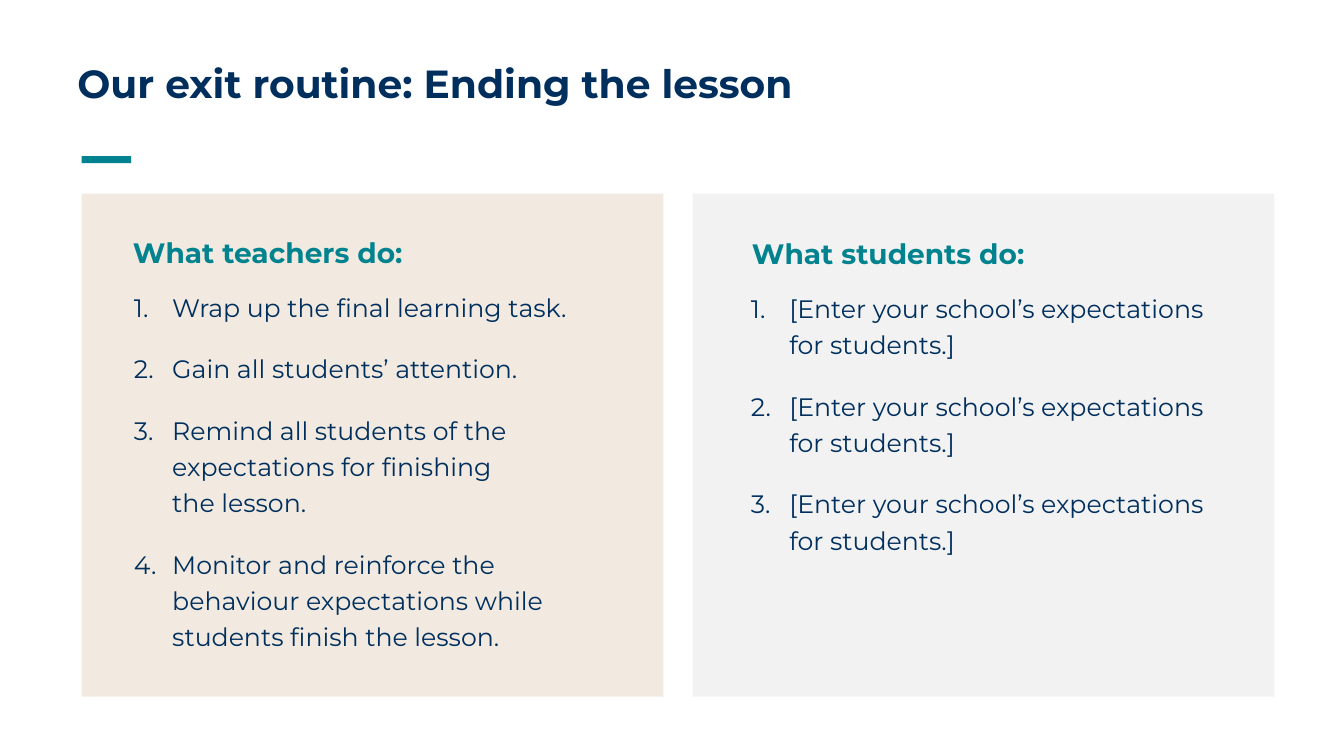
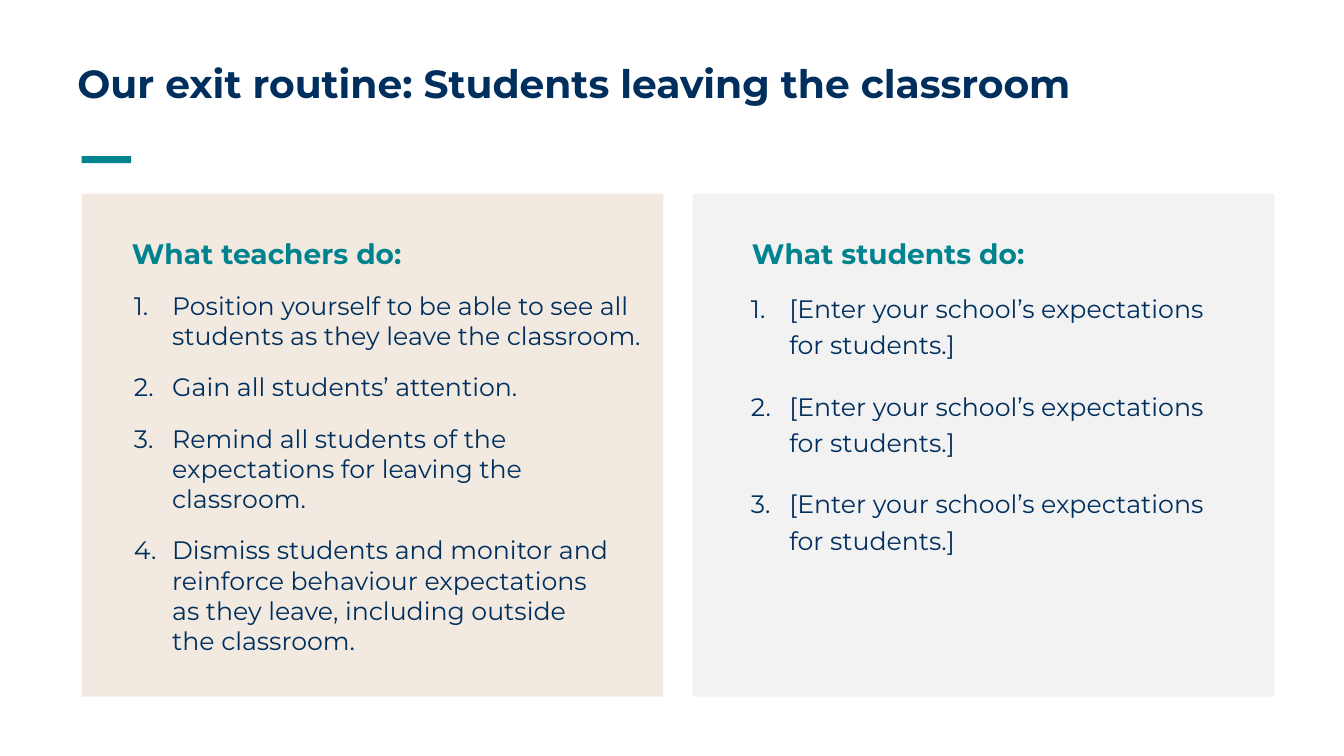
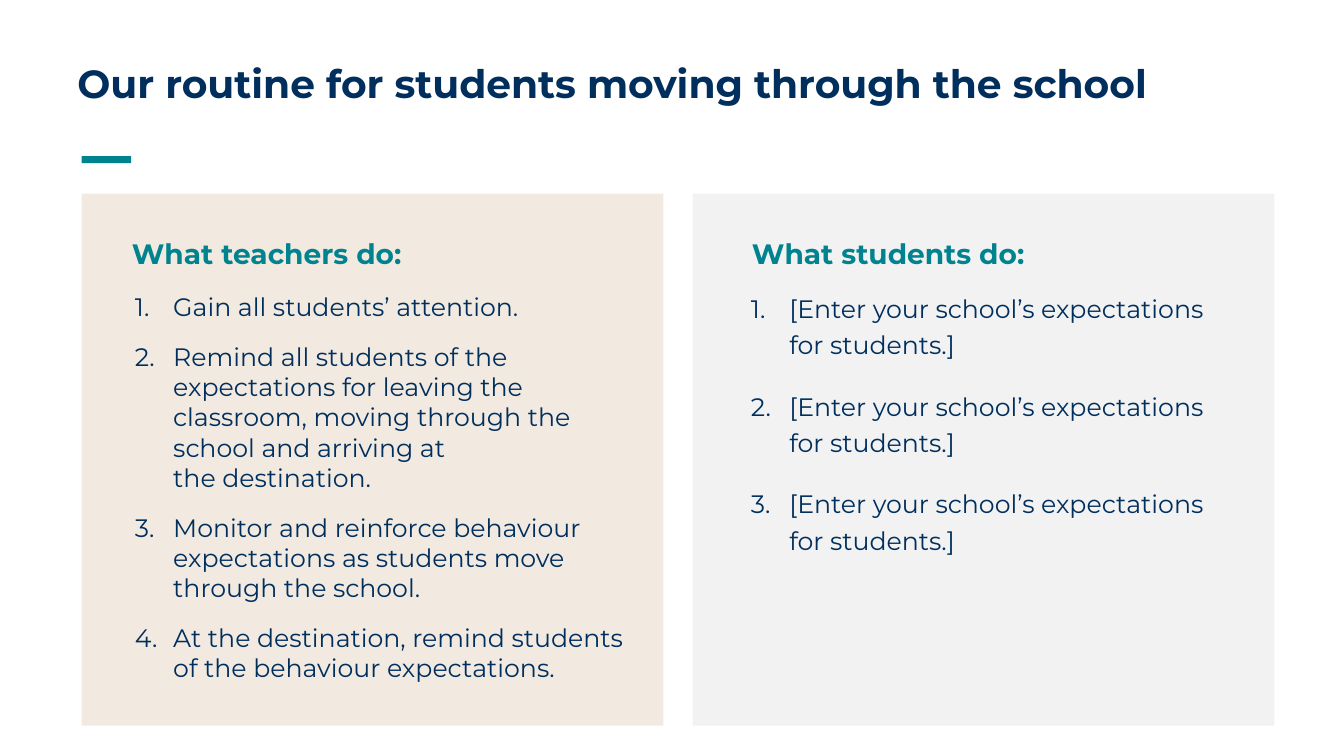
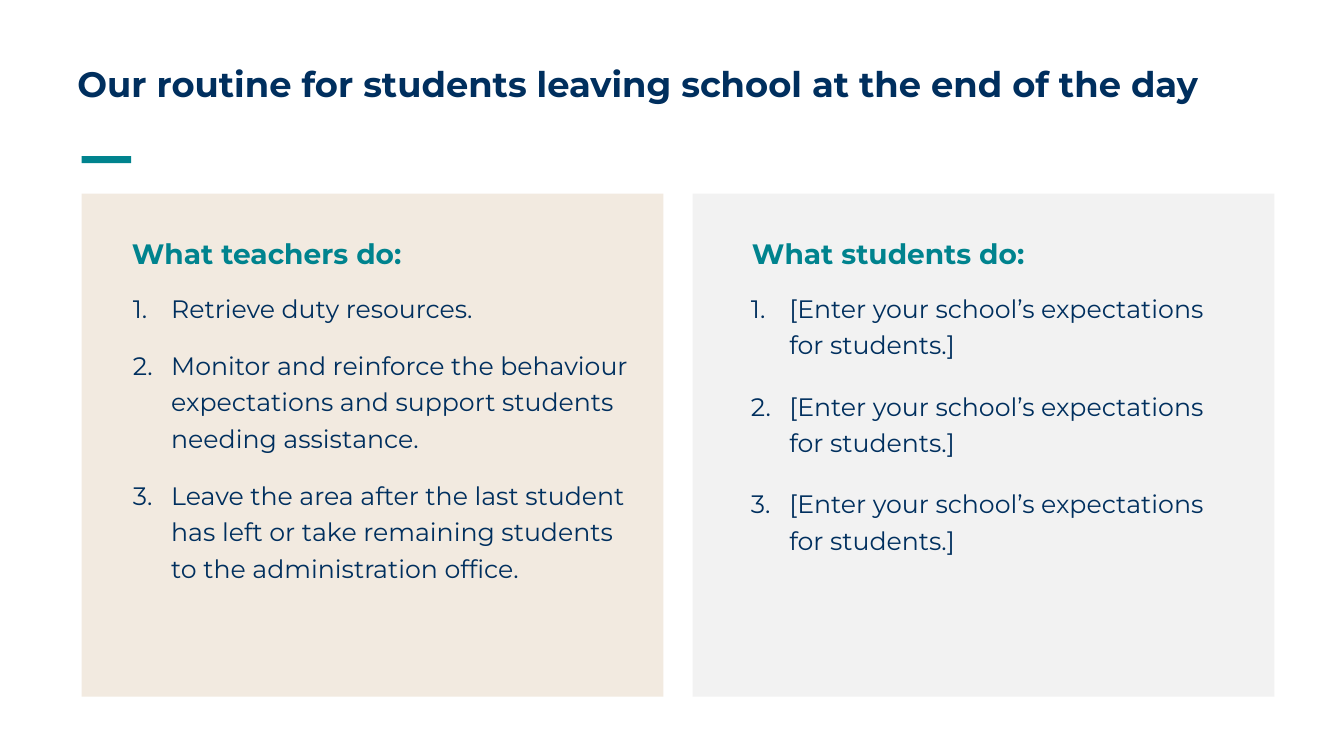
from dataclasses import dataclass

from lxml.etree import SubElement
from pptx import Presentation
from pptx.dml.color import RGBColor
from pptx.enum.shapes import MSO_SHAPE
from pptx.enum.text import MSO_ANCHOR, MSO_AUTO_SIZE
from pptx.oxml.ns import qn
from pptx.util import Inches, Pt


@dataclass(frozen=True)
class Theme:
    navy: str = "002F5E"
    teal: str = "00838E"
    sand: str = "F2EAE0"
    gray: str = "F2F2F2"
    font: str = "Montserrat"
    title: float = 28
    head: float = 20
    body: float = 18


THEME = Theme()
LEFT, TOP, WIDE, GAP = 0.81, 1.92, 5.77, 0.29
RIGHT = LEFT + WIDE + GAP
INDENT = 0.38

TASKS = ["[Enter your school’s expectations for students.]"] * 3

SLIDES = [
    dict(
        title="Our exit routine: Ending the lesson",
        steps=[
            "Wrap up the final learning task.",
            "Gain all students’ attention.",
            "Remind all students of the expectations for finishing \nthe lesson.",
            "Monitor and reinforce the behaviour expectations while "
            "students finish the lesson.",
        ],
        head=(1.22, 2.29, 5.42, 0.44),
        area=(1.23, 2.79, 4.92, 4.35),
    ),
    dict(
        title="Our exit routine: Students leaving the classroom",
        steps=[
            "Position yourself to be able to see all students as they "
            "leave the classroom.",
            "Gain all students’ attention.",
            "Remind all students of the expectations for leaving the classroom.",
            "Dismiss students and monitor and reinforce behaviour expectations "
            "\nas they leave, including outside \nthe classroom.",
        ],
        area=(1.23, 2.83, 5.27, 3.76),
        line=1.0,
        after=15,
    ),
    dict(
        title="Our routine for students moving through the school",
        steps=[
            "Gain all students’ attention.",
            "Remind all students of the expectations for leaving the classroom, "
            "moving through the school and arriving at \nthe destination.",
            "Monitor and reinforce behaviour expectations as students move "
            "\nthrough the school.",
            "At the destination, remind students \nof the behaviour expectations.",
        ],
        area=(1.24, 2.84, 5.2, 4.02),
        line=1.0,
        after=14,
        tall=5.28,
    ),
    dict(
        title="Our routine for students leaving school at the end of the day",
        steps=[
            "Retrieve duty resources.",
            "Monitor and reinforce the behaviour expectations and support "
            "students needing assistance.",
            "Leave the area after the last student has left or take remaining "
            "students to the administration office.",
        ],
        area=(1.22, 2.8, 5.27, 3.12),
        after=15,
        size=25.2,
    ),
]


def add_rect(slide, box, fill):
    rect = slide.shapes.add_shape(MSO_SHAPE.RECTANGLE, *map(Inches, box))
    rect.shadow.inherit = False
    rect.fill.solid()
    rect.fill.fore_color.rgb = RGBColor.from_string(fill)
    rect.line.fill.background()


def number(para):
    props = para._p.get_or_add_pPr()
    props.set("marL", str(Inches(INDENT)))
    props.set("indent", str(-Inches(INDENT)))
    SubElement(props, qn("a:buFont"), typeface="+mj-lt")
    SubElement(props, qn("a:buAutoNum"), type="arabicPeriod")


def add_text(slide, box, items, size=THEME.body, color=THEME.navy, bold=False,
             line=1.0, after=0, list_on=False, middle=False):
    frame = slide.shapes.add_textbox(*map(Inches, box)).text_frame
    frame.word_wrap = True
    if middle:
        frame.vertical_anchor = MSO_ANCHOR.MIDDLE
    else:
        frame.auto_size = MSO_AUTO_SIZE.SHAPE_TO_FIT_TEXT
    for index, item in enumerate(items):
        para = frame.add_paragraph() if index else frame.paragraphs[0]
        para.text = item
        para.line_spacing = line
        para.space_after = Pt(after)
        if list_on:
            number(para)
        for run in para.runs:
            font = run.font
            font.name, font.size, font.bold = THEME.font, Pt(size), bold
            font.color.rgb = RGBColor.from_string(color)


def add_panel(slide, left, tall, fill, title, head, steps, area, line, after):
    add_rect(slide, (left, TOP, WIDE, tall), fill)
    add_text(slide, head, [title], size=THEME.head, color=THEME.teal, bold=True)
    add_text(slide, area, steps, line=line, after=after, list_on=True)


def add_page(deck, title, steps, area, head=(1.21, 2.3, 5.26, 0.44),
             line=1.2, after=18, tall=4.99, size=THEME.title):
    slide = deck.slides.add_slide(deck.slide_layouts[6])
    add_rect(slide, (LEFT, 1.55, 0.49, 0.07), THEME.teal)
    add_text(slide, (0.67, 0.44, 11.94, 0.83), [title], size=size, bold=True,
             line=0.9, middle=True)
    add_panel(slide, LEFT, tall, THEME.sand, "What teachers do:",
              head, steps, area, line, after)
    add_panel(slide, RIGHT, tall, THEME.gray, "What students do:",
              (7.36, 2.3, 3.74, 0.44), TASKS, (7.35, 2.8, 4.99, 2.76), 1.2, 18)


def main():
    deck = Presentation()
    deck.slide_width, deck.slide_height = Inches(13.33), Inches(7.5)
    for page in SLIDES:
        add_page(deck, **page)
    deck.save("out.pptx")


if __name__ == "__main__":
    main()
